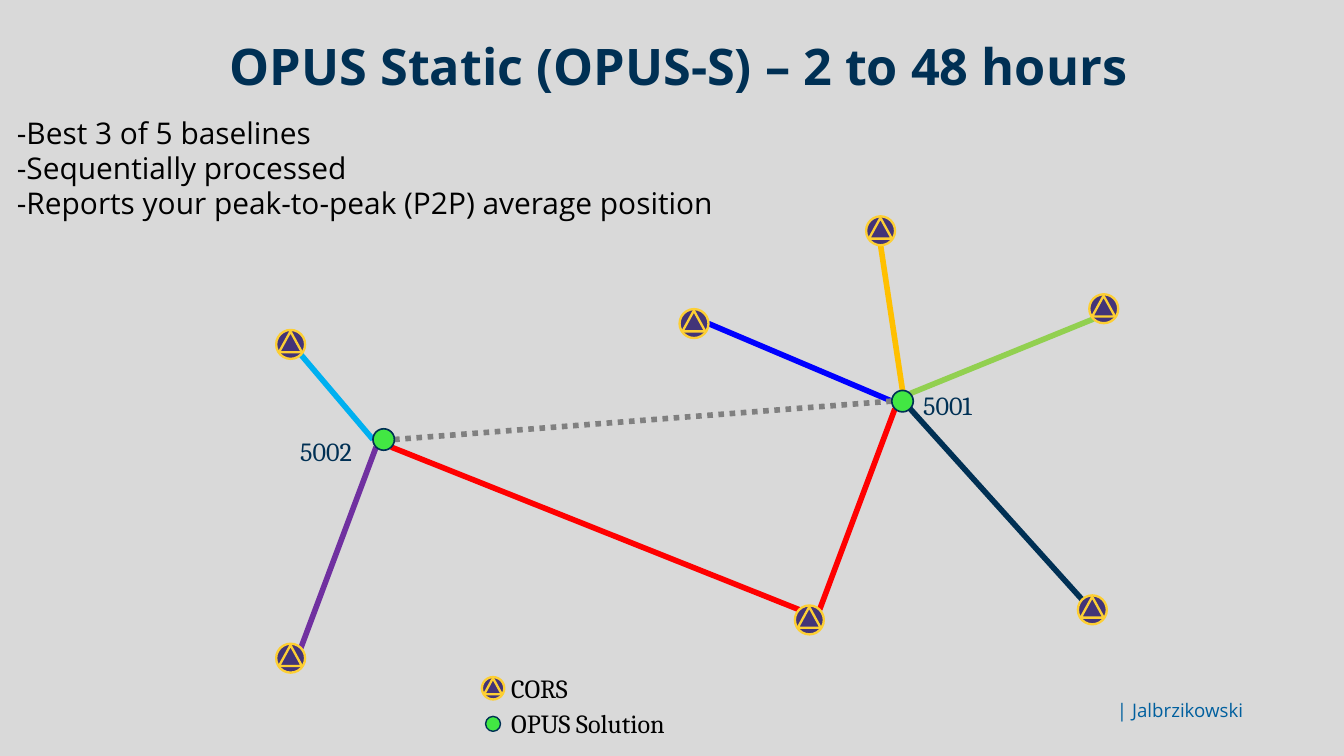
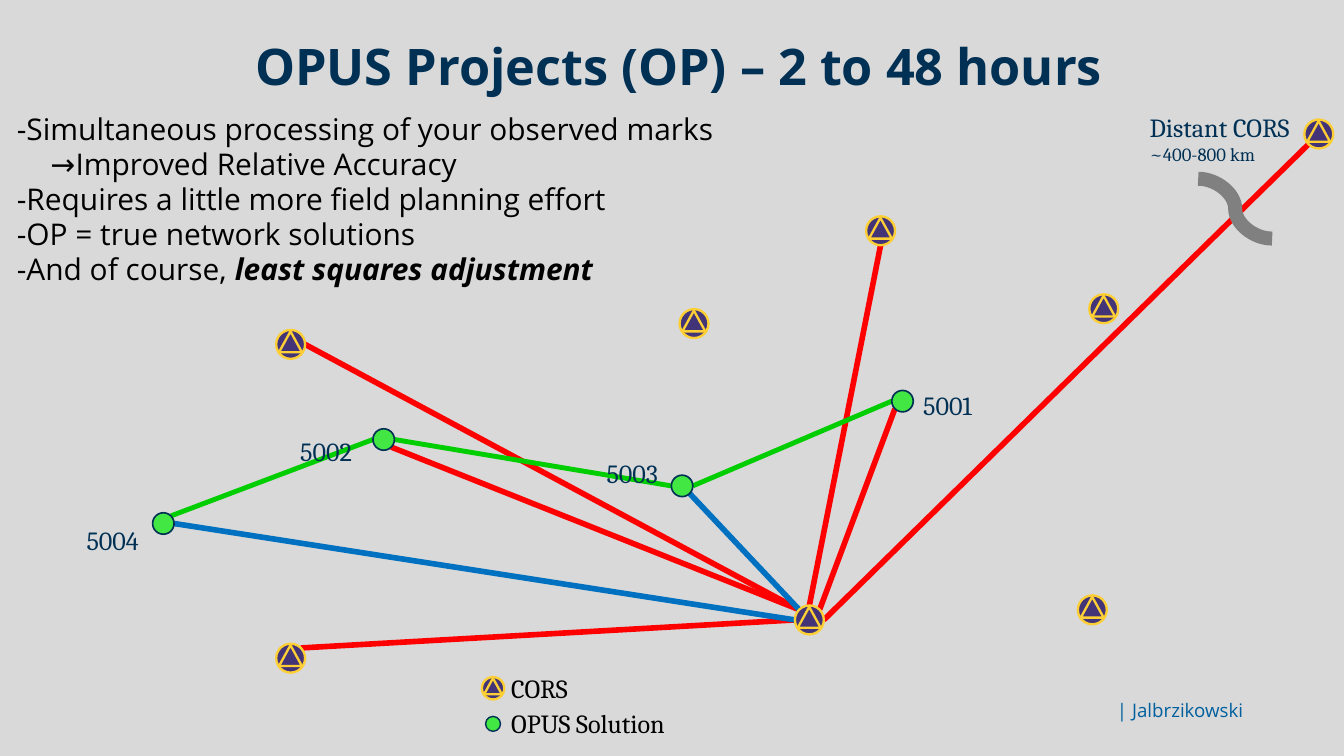
from collections import namedtuple
from math import cos, radians, sin

from lxml import etree
from pptx import Presentation
from pptx import util as u
from pptx.dml.color import RGBColor
from pptx.enum import dml, shapes, text
from pptx.oxml.ns import qn

Box = namedtuple("Box", "left top width height")
Link = namedtuple("Link", "start start_side end end_side color")

COLORS = {
    "background": "D9D9D9", "navy": "003054", "black": "000000", "footer": "005F9E",
    "cors": "433478", "gold": "FDCF34", "solution": "42E743", "gray": "808080",
    "red": "FF0000", "blue": "0000FF", "amber": "FFC000", "lime": "92D050",
    "sky": "00B0F0", "purple": "7030A0", "green": "00CE00", "azure": "0070C0",
}
SANS, SERIF = "Open Sans", "Cambria"
PAGE = Box(0, 0, 1440, 810)
TITLE = Box(151, 38, 1153, 63.5)
FOOTER = Box(106.5, 708, 1225.5, 102)
LEGEND = Box(516, 716.4, 234, 80)
MAP = Box(80, 120, 1350, 610)

CORS_SIZE, MARK_SIZE = 31, 23
LINE_WIDTH, VECTOR_WIDTH = 6, 5.25
CORS = {
    "north": (863.5, 127.3), "southeast": (1090.4, 533.4),
    "middle": (663.6, 226.7), "east": (1102.6, 210.8),
    "west": (231.4, 249), "southwest": (231.4, 585.2),
    "hub": (787.2, 544.2), "distant": (1333, 23.6),
}
MARKS = {
    "5001": (887, 309.8), "5002": (331.1, 350.9),
    "5003": (650.8, 400.6), "5004": (95, 440.9),
}
LABEL_OFFSETS = {
    "5001": (15, -16), "5002": (-96.5, -8),
    "5003": (-88, -34), "5004": (-89.3, -2.2),
}
ANGLES = {side: 45 * step for step, side in
          enumerate(["e", "se", "s", "sw", "w", "nw", "n", "ne"])}

STATIC_LINKS = [
    Link("middle", "e", "5001", "w", "blue"),
    Link("north", "s", "5001", "n", "amber"),
    Link("east", "sw", "5001", "ne", "lime"),
    Link("southeast", "nw", "5001", "se", "navy"),
    Link("hub", "ne", "5001", "sw", "red"),
    Link("west", "se", "5002", "w", "sky"),
    Link("hub", "nw", "5002", "se", "red"),
    Link("southwest", "ne", "5002", "sw", "purple"),
    Link("5001", "w", "5002", "e", "gray"),
]
PROJECT_LINKS = [
    Link("5004", "ne", "5002", "w", "green"),
    Link("north", "s", "hub", "n", "red"),
    Link("hub", "ne", "5001", "sw", "red"),
    Link("west", "e", "hub", "nw", "red"),
    Link("hub", "nw", "5002", "se", "red"),
    Link("southwest", "ne", "hub", "w", "red"),
    Link("distant", "sw", "hub", "e", "red"),
    Link("hub", "w", "5004", "e", "azure"),
    Link("hub", "nw", "5003", "se", "azure"),
    Link("5003", "w", "5002", "e", "green"),
    Link("5003", "e", "5001", "w", "green"),
]


def rgb(name):
    return RGBColor.from_string(COLORS[name])


def points(*lengths):
    return [u.Pt(round(length, 2)) for length in lengths]


def add_text_box(page, box, anchor=text.MSO_ANCHOR.TOP):
    frame = page.shapes.add_textbox(*points(*box)).text_frame
    frame.word_wrap = True
    frame.vertical_anchor = anchor
    return frame


def add_span(para, words, size, color, font=SANS, bold=False, italic=False):
    span = para.add_run()
    span.text = words
    span.font.name = font
    span.font.size = u.Pt(size)
    span.font.bold = bold
    span.font.italic = italic
    span.font.color.rgb = rgb(color)


def add_label(page, box, words, color):
    frame = add_text_box(page, box)
    add_span(frame.paragraphs[0], words, 28, color, SERIF)
    return frame


def add_marker(parent, kind, box, fill, line, width):
    marker = parent.shapes.add_shape(kind, *points(*box))
    marker.shadow.inherit = False
    marker.fill.solid()
    marker.fill.fore_color.rgb = rgb(fill)
    marker.line.color.rgb = rgb(line)
    marker.line.width = u.Pt(width)


def add_cors(page, x, y, size=CORS_SIZE):
    group = page.shapes.add_group_shape()
    left, top = x - size / 2, y - size / 2
    disc = Box(left, top, size, size)
    peak = Box(left + 0.1 * size, top + 0.05 * size, 0.79 * size, 0.72 * size)
    for kind, box in ((shapes.MSO_SHAPE.OVAL, disc),
                      (shapes.MSO_SHAPE.ISOSCELES_TRIANGLE, peak)):
        add_marker(group, kind, box, "cors", "gold", 2.5)


def add_mark(page, x, y, size=MARK_SIZE, width=1.75):
    box = Box(x - size / 2, y - size / 2, size, size)
    add_marker(page, shapes.MSO_SHAPE.OVAL, box, "solution", "navy", width)


def add_line(page, start, end, color, width, kind=shapes.MSO_CONNECTOR.STRAIGHT):
    line = page.shapes.add_connector(kind, *points(*start, *end))
    line.line.color.rgb = rgb(color)
    line.line.width = u.Pt(width)
    etree.SubElement(line._element.spPr, qn("a:effectLst"))
    return line


def draw_title(page, box, words):
    para = add_text_box(page, box, text.MSO_ANCHOR.MIDDLE).paragraphs[0]
    para.alignment = text.PP_ALIGN.CENTER
    add_span(para, words, 54, "navy", bold=True)


def draw_footer(page, box):
    frame = add_text_box(page, box, text.MSO_ANCHOR.MIDDLE)
    frame.margin_left = frame.margin_right = frame.margin_top = frame.margin_bottom = 0
    para = frame.paragraphs[0]
    para.alignment = text.PP_ALIGN.RIGHT
    para.line_spacing = 1.15
    add_span(para, "| Jalbrzikowski", 20, "footer")


def draw_points(page, box, lines):
    frame = add_text_box(page, box)
    for index, (indent, words, emphasis) in enumerate(lines):
        para = frame.add_paragraph() if index else frame.paragraphs[0]
        para.line_spacing = 0.9
        para.space_after = u.Pt(3)
        if indent:
            para._p.get_or_add_pPr().set("marL", str(u.Pt(indent)))
        add_span(para, words, 32, "black")
        if emphasis:
            add_span(para, emphasis, 32, "black", bold=True, italic=True)


def draw_legend(page, box):
    rows = [("CORS", lambda x, y: add_cors(page, x, y, 24)),
            ("OPUS Solution", lambda x, y: add_mark(page, x, y, 16, 1.5))]
    for index, (words, draw_symbol) in enumerate(rows):
        top = box.top + 38.2 * index
        draw_symbol(box.left + 12.3, top + 21)
        add_label(page, Box(box.left + 24.7, top, box.width - 24.7, 41), words, "black")


def draw_break(page, box):
    add_line(page, (box.left + 1203.8, box.top + 71.5), (box.left + 1283, box.top + 135.6),
             "gray", 15, shapes.MSO_CONNECTOR.CURVE)
    note = add_label(page, Box(box.left + 1144.7, box.top - 4, 173.5, 65.5),
                     "Distant CORS", "navy")
    add_span(note.add_paragraph(), "~400-800 km", 20, "navy", SERIF)


def draw_network(page, box, links, cors_names, mark_names):
    def place(name):
        x, y = CORS[name] if name in CORS else MARKS[name]
        return box.left + x, box.top + y

    def edge(name, side):
        x, y = place(name)
        radius = (CORS_SIZE if name in CORS else MARK_SIZE) / 2
        angle = radians(ANGLES[side])
        return x + radius * cos(angle), y + radius * sin(angle)

    for link in links:
        width = VECTOR_WIDTH if link.color == "green" else LINE_WIDTH
        line = add_line(page, edge(link.start, link.start_side),
                        edge(link.end, link.end_side), link.color, width)
        if link.color == "gray":
            line.line.dash_style = dml.MSO_LINE.ROUND_DOT
    if "distant" in cors_names:
        draw_break(page, box)
    for name in cors_names:
        add_cors(page, *place(name))
    for name in mark_names:
        x, y = place(name)
        add_mark(page, x, y)
        shift_x, shift_y = LABEL_OFFSETS[name]
        add_label(page, Box(x + shift_x, y + shift_y, 77, 41), name, "navy")


def build_slide(deck, title, points_box, lines, links, cors_names, mark_names):
    page = deck.slides.add_slide(deck.slide_layouts[6])
    page.background.fill.solid()
    page.background.fill.fore_color.rgb = rgb("background")
    draw_footer(page, FOOTER)
    draw_title(page, TITLE, title)
    draw_points(page, points_box, lines)
    draw_network(page, MAP, links, cors_names, mark_names)
    draw_legend(page, LEGEND)


def main():
    deck = Presentation()
    deck.slide_width, deck.slide_height = points(PAGE.width, PAGE.height)
    build_slide(
        deck, "OPUS Static (OPUS-S) – 2 to 48 hours", Box(11, 124, 778, 161),
        [(0, "-Best 3 of 5 baselines", ""),
         (0, "-Sequentially processed", ""),
         (0, "-Reports your peak-to-peak (P2P) average position", "")],
        STATIC_LINKS, [name for name in CORS if name != "distant"], ["5001", "5002"])
    build_slide(
        deck, "OPUS Projects (OP) – 2 to 48 hours", Box(11, 119, 802, 244),
        [(0, "-Simultaneous processing of your observed marks", ""),
         (36, "→Improved Relative Accuracy", ""),
         (0, "-Requires a little more field planning effort", ""),
         (0, "-OP = true network solutions", ""),
         (0, "-And of course, ", "least squares adjustment")],
        PROJECT_LINKS, list(CORS), list(MARKS))
    deck.save("out.pptx")


if __name__ == "__main__":
    main()
